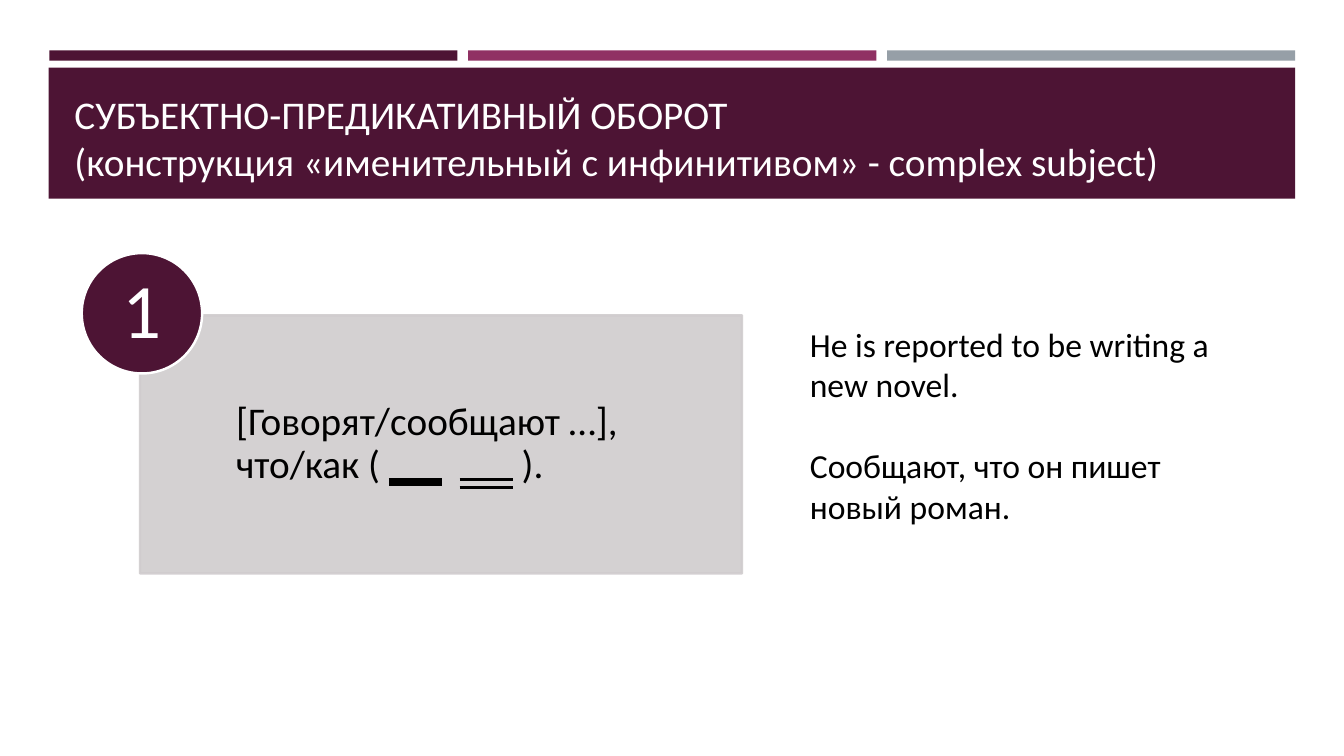
from lxml import etree
from pptx import Presentation
from pptx.dml.color import RGBColor
from pptx.enum.shapes import MSO_SHAPE
from pptx.enum.text import MSO_ANCHOR, MSO_TEXT_UNDERLINE_TYPE, PP_ALIGN
from pptx.oxml.ns import qn
from pptx.util import Pt

RECT, OVAL = MSO_SHAPE.RECTANGLE, MSO_SHAPE.OVAL
TOP, MIDDLE, BOTTOM = MSO_ANCHOR.TOP, MSO_ANCHOR.MIDDLE, MSO_ANCHOR.BOTTOM
LEFT, CENTER = PP_ALIGN.LEFT, PP_ALIGN.CENTER
HEAVY = MSO_TEXT_UNDERLINE_TYPE.HEAVY_LINE
DOUBLE = MSO_TEXT_UNDERLINE_TYPE.DOUBLE_LINE

PLUM = RGBColor(0x4D, 0x14, 0x34)
BERRY = RGBColor(0x90, 0x31, 0x63)
STEEL = RGBColor(0x96, 0x9F, 0xA7)
PALE = RGBColor(0xD0, 0xCC, 0xCE)
WHITE = RGBColor(0xFF, 0xFF, 0xFF)
BLACK = RGBColor(0, 0, 0)
FONT = "Calibri"

# Each paragraph is a list of runs: (text, underline, bold)
TITLE = [[("СУБЪЕКТНО-ПРЕДИКАТИВНЫЙ ОБОРОТ\v"
           "(конструкция «именительный с инфинитивом» - complex subject)", None, False)]]
BLANK = " " * 6  # underlined fill-in space for subject and predicate
PATTERN = [[("[Говорят/сообщают …], что/как ( ", None, False),
            (BLANK, HEAVY, False),
            ("  ", None, False),
            (BLANK, DOUBLE, True),
            (" ).", None, False)]]
NUMBER = [[("1", None, False)]]
EXAMPLES = [[("He is reported to be writing a new novel.", None, False)],
            [("Сообщают, что он пишет новый роман.", None, False)]]

BAR_COLORS = [PLUM, BERRY, STEEL]
BAR_LEFT, BAR_TOP, BAR_WIDTH, BAR_HEIGHT, BAR_GAP = 35.2, 36, 291.6, 7.4, 7.6


def add_block(slide, kind, box, fill, line=None, opacity=None):
    sp = slide.shapes.add_shape(kind, *map(Pt, box))
    sp.shadow.inherit = False
    sp.fill.solid()
    sp.fill.fore_color.rgb = fill
    if line is None:
        sp.line.fill.background()
    else:
        sp.line.color.rgb = line
        sp.line.width = Pt(1.75)
    if opacity is not None:
        for color in sp._element.spPr.iter(qn("a:srgbClr")):
            etree.SubElement(color, qn("a:alpha")).set("val", str(opacity * 1000))
    return sp


def write(sp, paragraphs, size, color, anchor=TOP, align=LEFT,
          insets=(7.2, 3.6, 7.2, 3.6), spacing=None, gap=0):
    """Fill a shape with paragraphs; insets run left, top, right, bottom."""
    tf = sp.text_frame
    tf.word_wrap = True
    tf.vertical_anchor = anchor
    tf.margin_left, tf.margin_top, tf.margin_right, tf.margin_bottom = map(Pt, insets)
    for i, runs in enumerate(paragraphs):
        p = tf.add_paragraph() if i else tf.paragraphs[0]
        p.alignment = align
        if spacing:
            p.line_spacing = spacing
        if i:
            p.space_before = Pt(gap)
        for text, underline, bold in runs:
            for j, part in enumerate(text.split("\v")):
                if j:
                    p.add_line_break()
                r = p.add_run()
                r.text = part
                r.font.name = FONT
                r.font.size = Pt(size)
                r.font.color.rgb = color
                r.font.bold = bold
                if underline:
                    r.font.underline = underline


def main():
    prs = Presentation()
    prs.slide_width, prs.slide_height = Pt(960), Pt(540)
    slide = prs.slides.add_slide(prs.slide_layouts[6])

    for i, color in enumerate(BAR_COLORS):
        left = BAR_LEFT + i * (BAR_WIDTH + BAR_GAP)
        add_block(slide, RECT, (left, BAR_TOP, BAR_WIDTH, BAR_HEIGHT), color)

    banner = add_block(slide, RECT, (34.8, 48.4, 890.4, 93.6), PLUM)
    write(banner, TITLE, 28, WHITE, BOTTOM, insets=(18.4, 7.2, 18.4, 10.2))

    panel = add_block(slide, RECT, (100, 225.2, 430, 184.4), PALE, PALE, opacity=90)
    write(panel, PATTERN, 28, BLACK, MIDDLE, insets=(68.6, 16, 16, 16), spacing=0.9)

    badge = add_block(slide, OVAL, (58.4, 180.8, 86, 86), PLUM, WHITE)
    write(badge, NUMBER, 55, WHITE, MIDDLE, CENTER, insets=(0, 0, 0, 0), spacing=0.9)

    examples = slide.shapes.add_textbox(Pt(571.4), Pt(227.6), Pt(333.4), Pt(152.6))
    write(examples, EXAMPLES, 24, BLACK, gap=29.3)

    prs.save("out.pptx")


if __name__ == "__main__":
    main()
